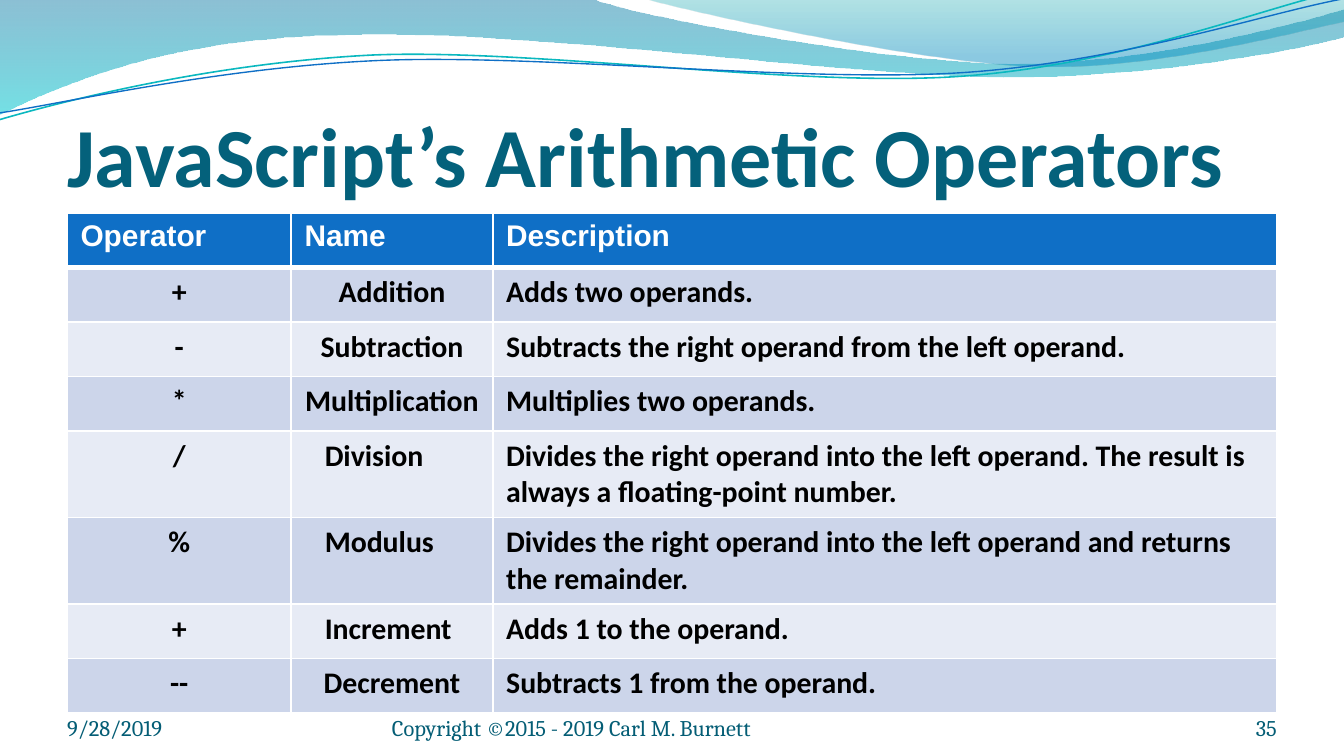
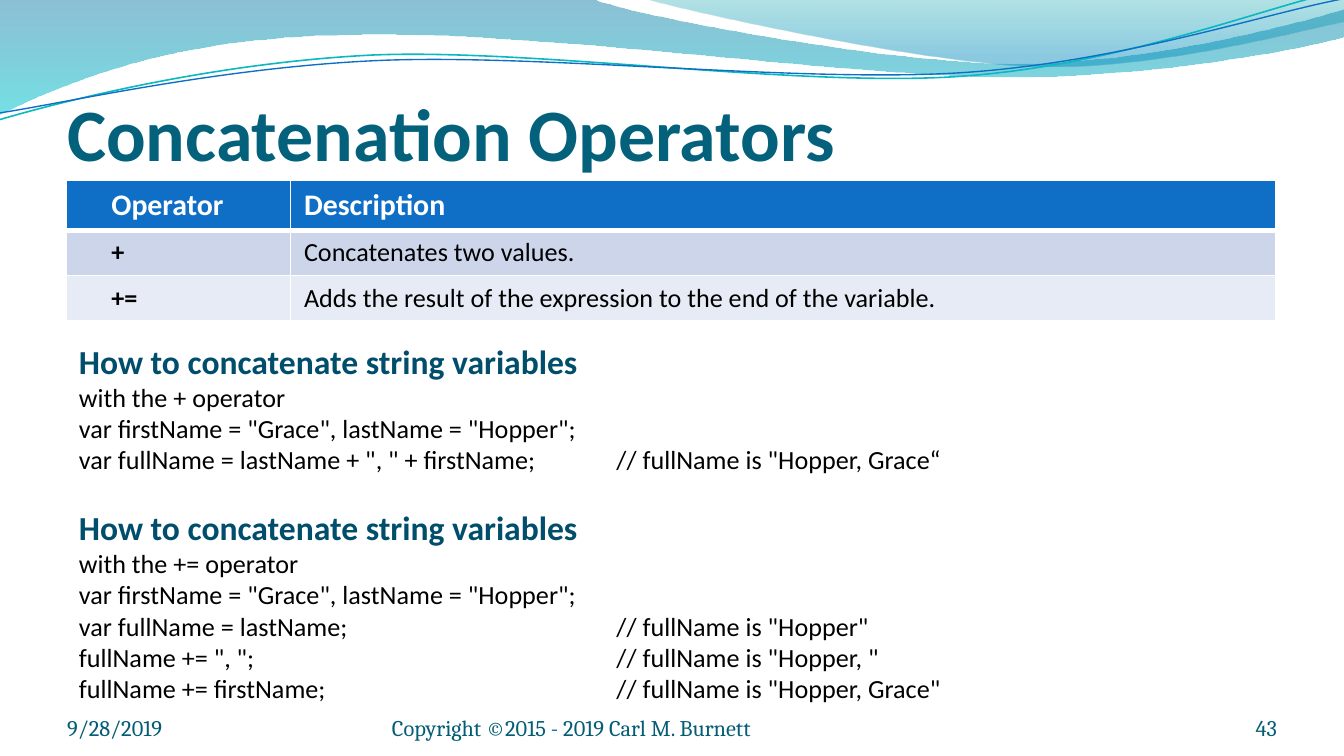
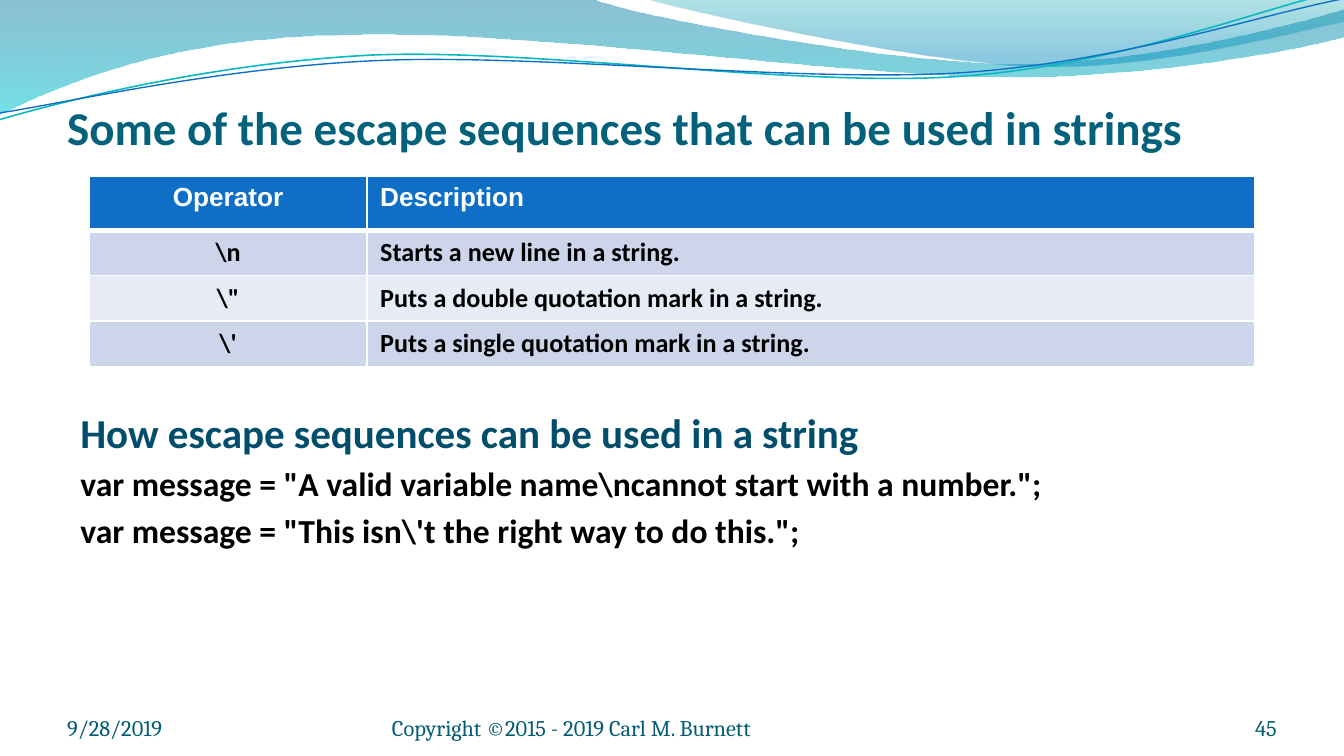
from lxml import etree
from pptx import Presentation, util as u
from pptx.dml.color import RGBColor
from pptx.enum import text as t
from pptx.oxml.ns import qn
import math

WIDE, HIGH = u.Inches(10), u.Inches(5.625)
COL, ROW, TENTH = WIDE / 120, HIGH / 67.5, WIDE / 10

WHITE = RGBColor(0xFF, 0xFF, 0xFF)
BLACK = RGBColor(0, 0, 0)
TITLE = RGBColor(0x04, 0x61, 0x7B)
FOOT = RGBColor(0x04, 0x5D, 0x75)
HEAD = RGBColor(0x00, 0x4E, 0x6C)
BLUE = RGBColor(0x0F, 0x6F, 0xC6)
TEAL = RGBColor(0x0A, 0xB8, 0xBF)
BANDS = RGBColor(0xCC, 0xD5, 0xEA), RGBColor(0xE7, 0xEB, 0xF5)
DEEP, AQUA = RGBColor(0x00, 0x74, 0xA1), RGBColor(0x00, 0xC6, 0xCF)
SEA, SKY = RGBColor(0x00, 0xA1, 0xA9), RGBColor(0x00, 0x8B, 0xBF)
LEFT, MID, RIGHT = t.PP_ALIGN.LEFT, t.PP_ALIGN.CENTER, t.PP_ALIGN.RIGHT
TILT = -2.7

SWELLS = [
    ((-0.01, -0.01, 10.02, 0.85),
     [(0, 0), (4.4, -0.01), (4.76, 0.13, 6.64, 0.47, 7.58, 0.47),
      (8.53, 0.47, 9.58, 0.19, 10, 0.07), (10.01, 0.27),
      (9.83, 0.33, 8.7, 0.57, 7.46, 0.57), (6.22, 0.56, 3.82, 0.21, 2.57, 0.26),
      (1.29, 0.27, 0.46, 0.62, -0.01, 0.85), (0, 0)],
     [(0, DEEP, 45), (100, AQUA, 55)]),
    ((4.79, -0.01, 5.21, 0.52),
     [(4.79, -0.01), (5.09, 0.08, 6.82, 0.46, 7.69, 0.49),
      (8.56, 0.52, 9.61, 0.24, 10, 0.16), (10, 0), (4.79, -0.01)],
     [(0, SEA, 30), (80, SKY, 45)]),
]
RIPPLES = [
    ((-0.02, 0.17, 10.02, 0.53),
     [(0, 0.89), (0.48, 0.75, 1.58, 0.47, 2.77, 0.41),
      (3.96, 0.36, 5.92, 0.65, 7.12, 0.57), (8.33, 0.49, 9.39, 0.06, 9.98, -0.07)],
     TEAL, 0.85),
    ((-0.02, 0.23, 10.03, 0.43),
     [(0, 0.84), (0.47, 0.77, 1.64, 0.5, 2.83, 0.45),
      (4.03, 0.4, 5.97, 0.62, 7.17, 0.54), (8.36, 0.46, 9.41, 0.1, 10, -0.01)],
     BLUE, 0.75),
]


def grid(x, y, w, h):
    return [round(v) for v in (x * COL, y * ROW, w * COL, h * ROW)]


def say(frame, words, size=14, font="Calibri", color=BLACK, bold=False,
        align=LEFT, before=0, tab=None):
    para = frame.paragraphs[0]
    if para.runs:
        para = frame.add_paragraph()
    para.alignment = align
    para.space_before = u.Pt(before)
    if tab:
        stops = etree.SubElement(para._p.get_or_add_pPr(), qn("a:tabLst"))
        etree.SubElement(stops, qn("a:tab"), pos=str(round(tab * COL)), algn="l")
    run = para.add_run()
    run.text = words
    run.font.size, run.font.name, run.font.bold = u.Pt(size), font, bold
    run.font.color.rgb = color


def pane(slide, box, inset=(0.1, 0.05, 0.1, 0.05), low=False):
    frame = slide.shapes.add_textbox(*grid(*box)).text_frame
    frame.word_wrap = True
    frame.vertical_anchor = t.MSO_ANCHOR.BOTTOM if low else t.MSO_ANCHOR.TOP
    (frame.margin_left, frame.margin_top,
     frame.margin_right, frame.margin_bottom) = map(u.Inches, inset)
    return frame


def curve(slide, box, steps, close=False, tilt=0):
    x, y, w, h = box
    turn = math.radians(-tilt)

    def local(a, b):
        a, b = a - x - w / 2, b - y - h / 2
        return (round((a * math.cos(turn) - b * math.sin(turn) + w / 2) * TENTH),
                round((a * math.sin(turn) + b * math.cos(turn) + h / 2) * TENTH))

    pen = slide.shapes.build_freeform(*local(*steps[0]))
    pen.add_line_segments([local(*step[-2:]) for step in steps[1:]], close=close)
    shape = pen.convert_to_shape()
    shape.left, shape.top, shape.width, shape.height = (round(v * TENTH) for v in box)
    shape.rotation = tilt
    shape.shadow.inherit = False
    route = next(shape._element.iter(qn("a:path")))
    route.set("w", str(shape.width))
    route.set("h", str(shape.height))
    for part in list(route):
        route.remove(part)
    for n, step in enumerate(steps):
        kind = "cubicBezTo" if len(step) == 6 else "lnTo" if n else "moveTo"
        part = etree.SubElement(route, qn("a:" + kind))
        for a, b in zip(step[::2], step[1::2]):
            px, py = local(a, b)
            etree.SubElement(part, qn("a:pt"), x=str(px), y=str(py))
    if close:
        etree.SubElement(route, qn("a:close"))
    return shape


def fade(shape, stops):
    props = shape._element.spPr
    grad = etree.Element(qn("a:gradFill"), rotWithShape="1")
    items = etree.SubElement(grad, qn("a:gsLst"))
    for place, color, alpha in stops:
        stop = etree.SubElement(items, qn("a:gs"), pos=str(place * 1000))
        tone = etree.SubElement(stop, qn("a:srgbClr"), val=str(color))
        etree.SubElement(tone, qn("a:alpha"), val=str(alpha * 1000))
    etree.SubElement(grad, qn("a:lin"), ang="5400000", scaled="0")
    props.find(qn("a:custGeom")).addnext(grad)


def waves(slide):
    for box, steps, stops in SWELLS:
        shape = curve(slide, box, steps, close=True)
        shape.line.fill.background()
        fade(shape, stops)
    for box, steps, color, width in RIPPLES:
        shape = curve(slide, box, steps, tilt=TILT)
        shape.fill.background()
        shape.line.color.rgb = color
        shape.line.width = u.Pt(width)


def footer(slide, box, number):
    x, y, w, h = box
    for left, width, words, align in (
            (0, 28, "9/28/2019", LEFT),
            (29, 44, "Copyright ©2015 - 2019 Carl M. Burnett", LEFT),
            (w - 10, 10, str(number), RIGHT)):
        frame = pane(slide, (x + left, y, width, h), (0, 0, 0, 0), True)
        say(frame, words, size=12, font="Cambria", color=FOOT, align=align)


def edge(cell, top, base):
    props = cell._tc.get_or_add_tcPr()
    for n, (side, width) in enumerate(zip("LRTB", (1, 1, top, base))):
        line = etree.Element(qn("a:ln" + side), w=str(u.Pt(width)))
        fill = etree.SubElement(line, qn("a:solidFill"))
        etree.SubElement(fill, qn("a:srgbClr"), val=str(WHITE))
        props.insert(n, line)


def table(slide, spot, cols, rows, cells, head, body):
    shape = slide.shapes.add_table(len(rows), len(cols), *grid(*spot, sum(cols), sum(rows)))
    sheet = shape.table
    sheet.horz_banding = False
    for n, width in enumerate(cols):
        sheet.columns[n].width = round(width * COL)
    for r, (height, line) in enumerate(zip(rows, cells)):
        sheet.rows[r].height = round(height * ROW)
        for c, words in enumerate(line):
            cell = sheet.cell(r, c)
            cell.fill.solid()
            cell.fill.fore_color.rgb = BANDS[(r - 1) % 2] if r else BLUE
            edge(cell, 3 if r == 1 else 1, 1 if r else 3)
            style = body[c] if r else head[c]
            say(cell.text_frame, words, **style)


def page(deck, title, size, height, number):
    slide = deck.slides.add_slide(deck.slide_layouts[6])
    waves(slide)
    frame = pane(slide, (6, 7, 108, height), (0, 0.05, 0, 0), True)
    say(frame, title, size=size, color=TITLE, bold=True)
    footer(slide, (6, 62.55, 108, 3.6), number)
    return slide


def maths(deck):
    slide = page(deck, "JavaScript’s Arithmetic Operators", 45, 11.2, 35)
    cells = [
        ("Operator", "Name", "Description"),
        ("+", "Addition", "Adds two operands."),
        ("-", "Subtraction", "Subtracts the right operand from the left operand."),
        ("*", "Multiplication", "Multiplies two operands."),
        ("/", "Division\t", "Divides the right operand into the left operand. "
                            "The result is always a floating-point number."),
        ("%", "Modulus\t", "Divides the right operand into the left operand "
                           "and returns the remainder."),
        ("+", "Increment\t", "Adds 1 to the operand."),
        ("--", "Decrement", "Subtracts 1 from the operand."),
    ]
    rows = [7.74 if len(line[2]) > 60 else 4.86 for line in cells]
    head = dict(size=16, font="Arial", color=WHITE, bold=True)
    body = dict(size=16, bold=True)
    key = dict(body, align=MID)
    table(slide, (6, 19.05), (20, 18, 70), rows, cells, [head] * 3, [key, key, body])


def joins(deck):
    slide = page(deck, "Concatenation Operators", 39.6, 8.75, 43)
    cells = [
        ("Operator\t", "Description"),
        ("+\t", "Concatenates two values."),
        ("+=\t", "Adds the result of the expression to the end of the variable."),
    ]
    head = dict(size=16, color=WHITE, bold=True)
    key = dict(align=MID, tab=12)
    table(slide, (5.95, 16.1), (20, 88), (4.45, 4.06, 4.06), cells,
          [dict(head, **key), head], [dict(key, bold=True), {}])
    blocks = [
        ('with the + operator',
         'var firstName = "Grace", lastName = "Hopper";',
         'var fullName = lastName + ", " + firstName;\t// fullName is "Hopper, Grace“'),
        ('with the += operator',
         'var firstName = "Grace", lastName = "Hopper";',
         'var fullName = lastName;\t// fullName is "Hopper"',
         'fullName += ", ";\t// fullName is "Hopper, "',
         'fullName += firstName;\t// fullName is "Hopper, Grace"'),
    ]
    frame = pane(slide, (5.87, 29.83, 108, 34))
    for n, lines in enumerate(blocks):
        say(frame, "How to concatenate string variables", size=18, color=HEAD,
            bold=True, before=17 * n)
        for line in lines:
            say(frame, line, tab=48)


def escapes(deck):
    slide = page(deck, "Some of the escape sequences that can be used in strings",
                 25.2, 6.8, 45)
    frame = pane(slide, (6, 35.75, 108, 26.5))
    say(frame, "How escape sequences can be used in a string", size=22, color=HEAD,
        bold=True, before=3.6)
    for line in (r'var message = "A valid variable name\ncannot start with a number.";',
                 r'''var message = "This isn\'t the right way to do this.";'''):
        say(frame, line, size=18, bold=True, before=3.6)
    cells = [
        ("Operator", "Description"),
        (r"\n", "Starts a new line in a string."),
        (r'\"', "Puts a double quotation mark in a string."),
        (r"\'", "Puts a single quotation mark in a string."),
    ]
    head = dict(font="Arial", color=WHITE, bold=True)
    body = dict(bold=True)
    table(slide, (8, 15.75), (24.75, 79.25), (4.8, 4.06, 4.06, 4.06), cells,
          [dict(head, align=MID), head], [dict(body, align=MID), body])


def main():
    deck = Presentation()
    deck.slide_width, deck.slide_height = WIDE, HIGH
    for build in (maths, joins, escapes):
        build(deck)
    deck.save("out.pptx")


if __name__ == "__main__":
    main()
